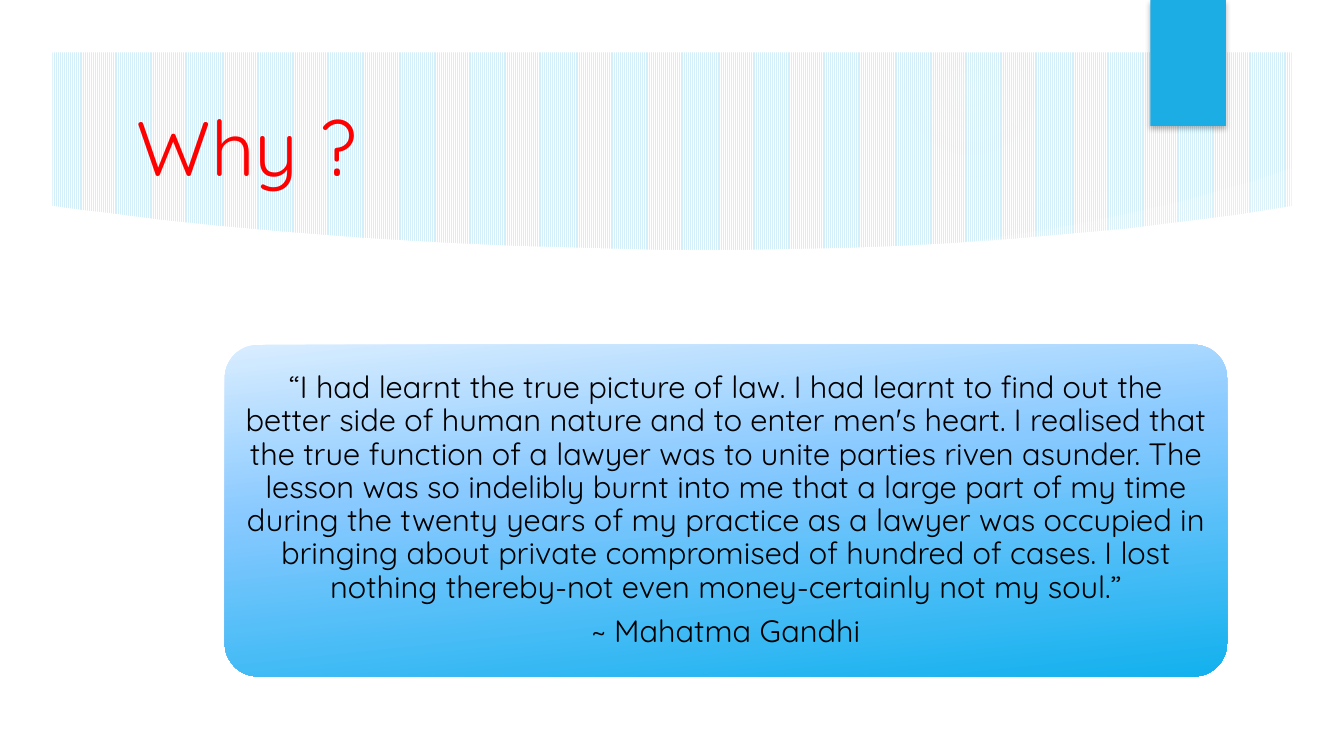
from lxml import etree
from pptx import Presentation
from pptx import oxml
from pptx.dml.color import RGBColor
from pptx.enum import dml, shapes, text
from pptx.oxml import ns
from pptx.util import Inches, Pt

COLORS = {
    "stripe": "D2EFFA", "white": "FFFFFF", "glow": "F2F4F5", "tab": "1CADE4",
    "title": "FF0000", "quote": "000000", "shadow": "000000",
    "card_top": "D9EDFF", "card_middle": "88C9FF", "card_bottom": "12B1EE",
}
FONT = "Quicksand"


def color(name):
    return RGBColor.from_string(COLORS[name])


def set_gradient(shape, stops, direction):
    """Fill with (percent, color name, opacity percent) stops and a direction element."""
    stop_xml = "".join(
        f'<a:gs pos="{pos * 1000}"><a:srgbClr val="{COLORS[name]}">'
        f'<a:alpha val="{opacity * 1000}"/></a:srgbClr></a:gs>'
        for pos, name, opacity in stops)
    gradient = oxml.parse_xml(
        f'<a:gradFill {ns.nsdecls("a")} rotWithShape="1">'
        f'<a:gsLst>{stop_xml}</a:gsLst>{direction}</a:gradFill>')
    shape.fill.background()
    properties = shape.fill._xPr
    properties.replace(properties.find(ns.qn("a:noFill")), gradient)


deck = Presentation()
deck.slide_width, deck.slide_height = Inches(13.33), Inches(7.5)
page = deck.slides.add_slide(deck.slide_layouts[6])

# Striped background
backdrop = page.background.fill
backdrop.patterned()
backdrop.pattern = dml.MSO_PATTERN.LIGHT_VERTICAL
backdrop.fore_color.rgb = color("stripe")
backdrop.back_color.rgb = color("white")

# Soft glows in the banner
radial = ('<a:path path="circle"><a:fillToRect l="50000" t="50000" '
          'r="50000" b="50000"/></a:path>')
for left, top, size, stops in [
    (9.41, 1.83, 3.08, [(0, 7), (36, 6), (69, 0)]),
    (8.75, 0, 1.75, [(0, 14), (36, 7), (73, 0)]),
]:
    glow = page.shapes.add_shape(shapes.MSO_SHAPE.OVAL, Inches(left), Inches(top),
                                 Inches(size), Inches(size))
    set_gradient(glow, [(pos, "glow", opacity) for pos, opacity in stops], radial)
    glow.line.fill.background()
    glow.shadow.inherit = False

# Translucent sheen and the white panel with its curved top edge
sheen_points = [
    (9.34, 2.5), (10.1, 2.48), (11, 2.4), (12, 2.28), (12.89, 2.14), (12.83, 1.66),
    (12.48, 1.78), (12.13, 1.88), (11.78, 1.98), (11.44, 2.06), (11.09, 2.14),
    (10.75, 2.21), (10.42, 2.27), (10.1, 2.32), (9.79, 2.37), (9.3, 2.43),
]
panel_points = [
    (0.5, 2.04), (0.5, 7), (12.84, 7), (12.84, 2.04), (12.28, 2.13), (11.72, 2.2),
    (11.16, 2.27), (10.6, 2.32), (10.04, 2.37), (9.49, 2.41), (8.94, 2.44),
    (8.4, 2.46), (7.86, 2.47), (7.34, 2.48), (6.57, 2.48), (5.83, 2.46),
    (5.11, 2.44), (4.44, 2.41), (3.6, 2.36), (2.83, 2.3), (2.16, 2.24),
    (1.59, 2.18), (1.13, 2.12), (0.79, 2.08),
]
for points, opacity in [(sheen_points, 20), (panel_points, 100)]:
    corners = [(Inches(x), Inches(y)) for x, y in points]
    builder = page.shapes.build_freeform(*corners[0])
    builder.add_line_segments(corners[1:], close=True)
    outline = builder.convert_to_shape()
    outline.fill.solid()
    outline.fill.fore_color.rgb = color("white")
    if opacity < 100:
        tint = outline.fill._xPr.find(".//" + ns.qn("a:srgbClr"))
        etree.SubElement(tint, ns.qn("a:alpha"), val=str(opacity * 1000))
    outline.line.fill.background()
    outline.shadow.inherit = False

# White border and blue tab
border = page.shapes.add_shape(shapes.MSO_SHAPE.FRAME, 0, 0,
                               deck.slide_width, deck.slide_height)
border.adjustments[0] = 0.52 / 7.5
tab = page.shapes.add_shape(shapes.MSO_SHAPE.RECTANGLE, Inches(11.41), 0,
                            Inches(0.75), Inches(1.25))
for shape, name in [(border, "white"), (tab, "tab")]:
    shape.fill.solid()
    shape.fill.fore_color.rgb = color(name)
    shape.line.fill.background()
    shape.shadow.inherit = False
effects = tab.fill._xPr.find(ns.qn("a:effectLst"))
effects.append(oxml.parse_xml(
    f'<a:outerShdw {ns.nsdecls("a")} blurRad="{Pt(4)}" dist="{Pt(2)}" dir="5400000" '
    f'algn="t" rotWithShape="0"><a:srgbClr val="{COLORS["shadow"]}">'
    '<a:alpha val="28000"/></a:srgbClr></a:outerShdw>'))

# Title
title = page.shapes.add_textbox(Inches(1.26), Inches(1.06), Inches(9.58), Inches(0.77))
title.text_frame.word_wrap = True
title.text_frame.vertical_anchor = text.MSO_ANCHOR.MIDDLE
title.text_frame.text = "Why ?"
title_font = title.text_frame.paragraphs[0].runs[0].font
title_font.name, title_font.size = FONT, Pt(55)
title_font.color.rgb = color("title")

# Quote card
card = page.shapes.add_shape(shapes.MSO_SHAPE.ROUNDED_RECTANGLE, Inches(2.23),
                             Inches(3.42), Inches(9.94), Inches(3.29))
card.adjustments[0] = 0.1
set_gradient(card, [(0, "card_top", 100), (40, "card_middle", 100),
                    (100, "card_bottom", 100)],
             f'<a:lin ang="{84 * 60000}" scaled="0"/>')
card.line.fill.background()
card.shadow.inherit = False

frame = card.text_frame
frame.word_wrap = True
frame.vertical_anchor = text.MSO_ANCHOR.MIDDLE
frame.margin_left = frame.margin_right = Inches(0.09)
frame.margin_top = frame.margin_bottom = Inches(0.09)
frame.text = (
    "“I had learnt the true picture of law. I had learnt to find out the better side "
    "of human nature and to enter men's heart. I realised that the true function of a "
    "lawyer was to unite parties riven asunder. The lesson was so indelibly burnt into "
    "me that a large part of my time during the twenty years of my practice as a lawyer "
    "was occupied in bringing about private compromised of hundred of cases. I lost "
    "nothing thereby-not even money-certainly not my soul.”\n"
    "~ Mahatma Gandhi")
for para in frame.paragraphs:
    para.alignment = text.PP_ALIGN.CENTER
    para.line_spacing = 0.9
    para.space_after = Pt(7.7)
    for span in para.runs:
        span.font.name, span.font.size = FONT, Pt(22)
        span.font.color.rgb = color("quote")

deck.save("out.pptx")
